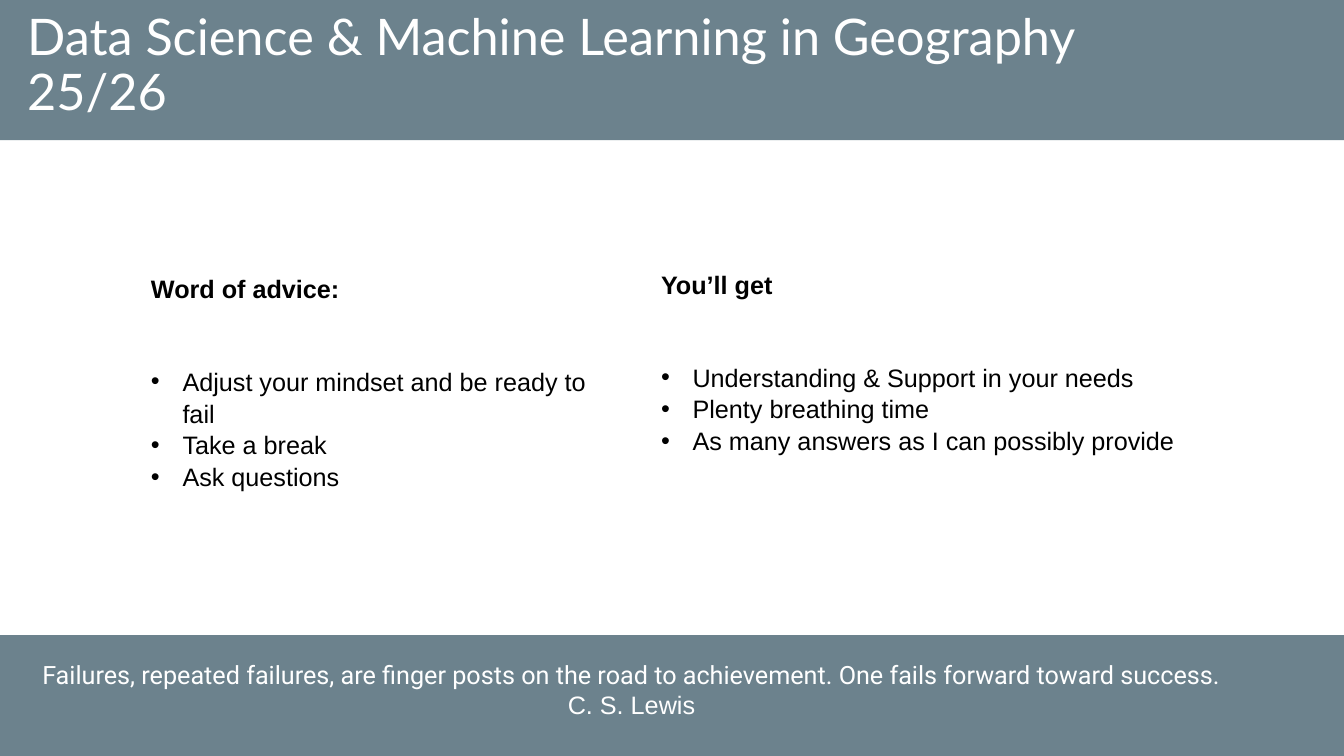
from dataclasses import dataclass

from lxml.etree import SubElement
from pptx import Presentation
from pptx.dml.color import RGBColor
from pptx.enum.shapes import MSO_SHAPE as Preset
from pptx.enum.text import MSO_ANCHOR as Anchor, MSO_AUTO_SIZE as AutoSize, PP_ALIGN as Align
from pptx.oxml.ns import qn
from pptx.shapes.autoshape import Shape
from pptx.slide import Slide
from pptx.text.text import TextFrame, _Paragraph as Paragraph
from pptx.util import Pt

NAVY, WHITE, BLACK = "0B3041", "FFFFFF", "000000"
BODY_SIZE = 18
BODY_SPACING = 1.05
BULLET_INDENT = 22.5
HEADING_GAP = 43.4


@dataclass(frozen=True)
class Box:
    left: float
    top: float
    width: float
    height: float

    def lengths(self) -> tuple[Pt, Pt, Pt, Pt]:
        return Pt(self.left), Pt(self.top), Pt(self.width), Pt(self.height)


@dataclass(frozen=True)
class Column:
    box: Box
    heading: str
    points: tuple[str, ...]


BANDS = (
    Box(-9.4, 453.6, 973.4, 94.3),
    Box(-42.5, -8.6, 1040.4, 108.7),
)
TITLE_BOX = Box(12.2, 10.1, 865.4, 74.9)
QUOTE_BOX = Box(-61.2, 467.3, 1024.6, 72.7)
COLUMNS = (
    Column(
        Box(100.8, 190.8, 349.9, 159.8),
        "Word of advice:",
        ("Adjust your mindset and be ready to fail", "Take a break", "Ask questions"),
    ),
    Column(
        Box(465.1, 187.9, 413.3, 159.8),
        "You’ll get",
        (
            "Understanding & Support in your needs",
            "Plenty breathing time",
            "As many answers as I can possibly provide",
        ),
    ),
)
QUOTE = (
    "Failures, repeated failures, are finger posts on the road to achievement. "
    "One fails forward toward success."
)


def color(hex_value: str) -> RGBColor:
    return RGBColor.from_string(hex_value)


def write(paragraph: Paragraph, words: str, font: str, size: float, ink: str,
          bold: bool = False) -> None:
    paragraph.text = words
    paragraph.font.name = font
    paragraph.font.size = Pt(size)
    paragraph.font.bold = bold
    paragraph.font.color.rgb = color(ink)


def add_bullet(paragraph: Paragraph) -> None:
    properties = paragraph._p.get_or_add_pPr()
    properties.set("marL", str(Pt(BULLET_INDENT)))
    properties.set("indent", str(-Pt(BULLET_INDENT)))
    bullet_font = SubElement(properties, qn("a:buFont"))
    bullet_font.set("typeface", "Arial")
    SubElement(properties, qn("a:buChar")).set("char", "•")


def add_band(slide: Slide, box: Box) -> Shape:
    band = slide.shapes.add_shape(Preset.RECTANGLE, *box.lengths())
    band.shadow.inherit = False
    band.fill.solid()
    band.fill.fore_color.rgb = color(NAVY)
    band.line.fill.background()
    tint = band.element.spPr.find(f"{qn('a:solidFill')}/{qn('a:srgbClr')}")
    SubElement(tint, qn("a:alpha")).set("val", "60000")
    return band


def add_text(slide: Slide, box: Box) -> TextFrame:
    frame = slide.shapes.add_textbox(*box.lengths()).text_frame
    frame.word_wrap = True
    frame.auto_size = AutoSize.SHAPE_TO_FIT_TEXT
    return frame


def add_column(slide: Slide, column: Column) -> None:
    frame = add_text(slide, column.box)
    heading = frame.paragraphs[0]
    heading.line_spacing = BODY_SPACING
    heading.space_after = Pt(HEADING_GAP)
    write(heading, column.heading, "Arial", BODY_SIZE, BLACK, bold=True)
    for words in column.points:
        point = frame.add_paragraph()
        point.line_spacing = BODY_SPACING
        add_bullet(point)
        write(point, words, "Arial", BODY_SIZE, BLACK)


def add_quote(slide: Slide) -> None:
    frame = add_text(slide, QUOTE_BOX)
    quote, author = frame.paragraphs[0], frame.add_paragraph()
    write(quote, QUOTE, "Roboto", BODY_SIZE, WHITE)
    write(author, "C. S. Lewis", "Arial", BODY_SIZE, WHITE)
    quote.alignment = author.alignment = Align.CENTER


def set_title(slide: Slide) -> None:
    title = slide.shapes.title
    title.left, title.top, title.width, title.height = TITLE_BOX.lengths()
    frame = title.text_frame
    frame.word_wrap = True
    frame.auto_size = AutoSize.NONE
    frame.vertical_anchor = Anchor.MIDDLE
    course = frame.paragraphs[0]
    write(course, "Data Science & Machine Learning in Geography 25/26", "Lato", 36, WHITE)
    course.alignment = Align.LEFT
    course.line_spacing = 0.9


def main() -> None:
    deck = Presentation()
    deck.slide_width, deck.slide_height = Pt(960), Pt(540)
    slide = deck.slides.add_slide(deck.slide_layouts[5])
    set_title(slide)
    for box in BANDS:
        slide.shapes.title.element.addprevious(add_band(slide, box).element)
    for column in COLUMNS:
        add_column(slide, column)
    add_quote(slide)
    deck.save("out.pptx")


if __name__ == "__main__":
    main()
